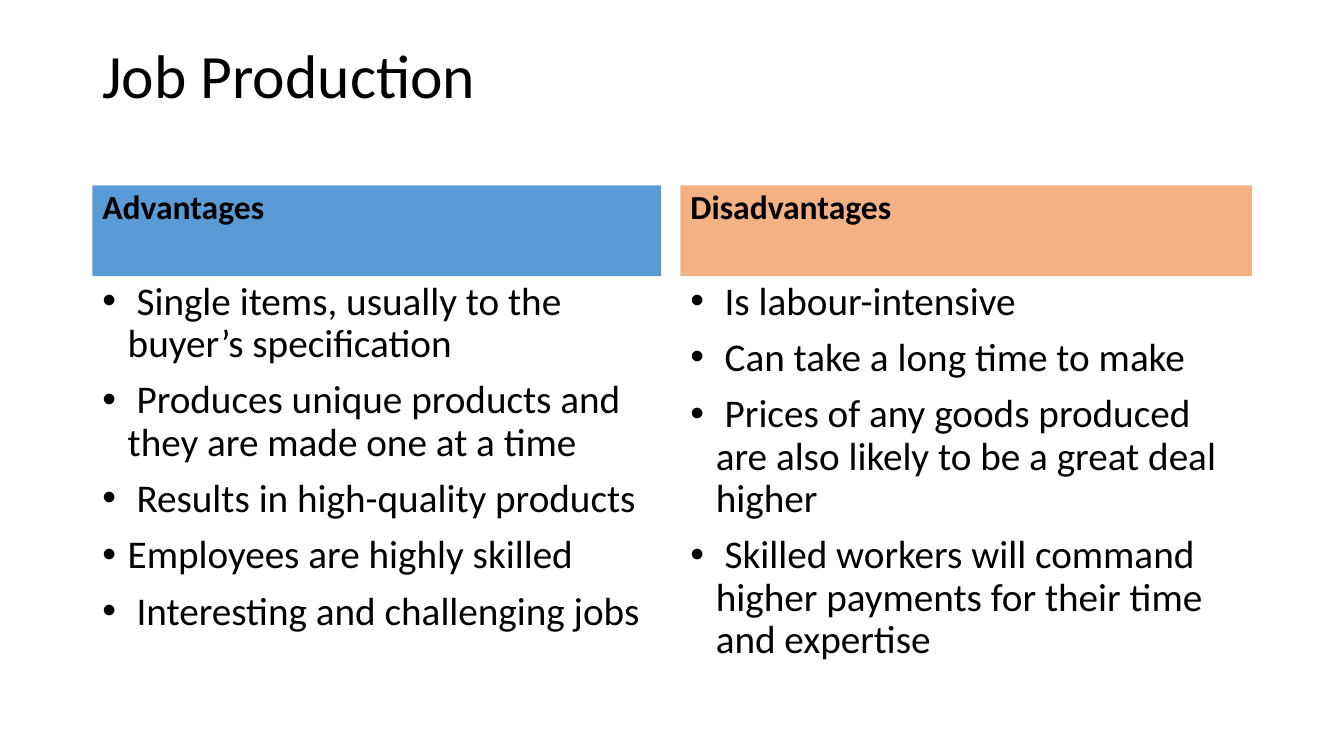
from dataclasses import dataclass

from lxml.etree import SubElement
from pptx import Presentation
from pptx.dml.color import RGBColor
from pptx.enum.text import MSO_ANCHOR
from pptx.oxml.ns import qn
from pptx.util import Cm, Pt


@dataclass(frozen=True)
class Theme:
    font: str = "Calibri"
    ink: str = "000000"
    blue: str = "5B9BD5"
    orange: str = "F4B183"
    title_size: int = 44
    heading_size: int = 24
    body_size: int = 28


theme = Theme()
deck = Presentation()
deck.slide_width, deck.slide_height = Cm(33.87), Cm(19.05)
page = deck.slides.add_slide(deck.slide_layouts[6])


def add_text(text, *, left, top, width, height, size, bold=False, fill=None, bullets=False, space=0):
    box = page.shapes.add_textbox(Cm(left), Cm(top), Cm(width), Cm(height))
    if fill:
        box.fill.solid()
        box.fill.fore_color.rgb = RGBColor.from_string(fill)
    frame = box.text_frame
    frame.word_wrap = True
    frame.vertical_anchor = MSO_ANCHOR.TOP
    frame.text = text
    for para in frame.paragraphs:
        para.line_spacing = 0.9
        para.space_before = Pt(space)
        if bullets:
            properties = para._p.get_or_add_pPr()
            indent = Cm(0.64)
            properties.set("marL", str(indent))
            properties.set("indent", str(-indent))
            SubElement(properties, qn("a:buFont"), typeface="Arial")
            SubElement(properties, qn("a:buChar"), char="•")
        for span in para.runs:
            span.font.name = theme.font
            span.font.size = Pt(size)
            span.font.bold = bold
            span.font.color.rgb = RGBColor.from_string(theme.ink)


margin = 2.33
heading_top, heading_height = 4.67, 2.29
columns = [
    ("Advantages", theme.blue, margin, 14.33, [
        " Single items, usually to the buyer’s specification",
        " Produces unique products and they are made one at a time",
        " Results in high-quality products",
        "Employees are highly skilled",
        " Interesting and challenging jobs",
    ]),
    ("Disadvantages", theme.orange, 17.15, 14.4, [
        " Is labour-intensive",
        " Can take a long time to make",
        " Prices of any goods produced are also likely to be a great deal higher",
        " Skilled workers will command higher payments for their time and expertise",
    ]),
]

add_text("Job Production", left=margin, top=1.02, width=29.21, height=3.68, size=theme.title_size)
for heading, colour, left, width, points in columns:
    add_text(heading, left=left, top=heading_top, width=width, height=heading_height,
             size=theme.heading_size, bold=True, fill=colour, space=10)
    add_text("\n".join(points), left=left, top=heading_top + heading_height, width=width, height=10.24,
             size=theme.body_size, bullets=True, space=10)

deck.save("out.pptx")
